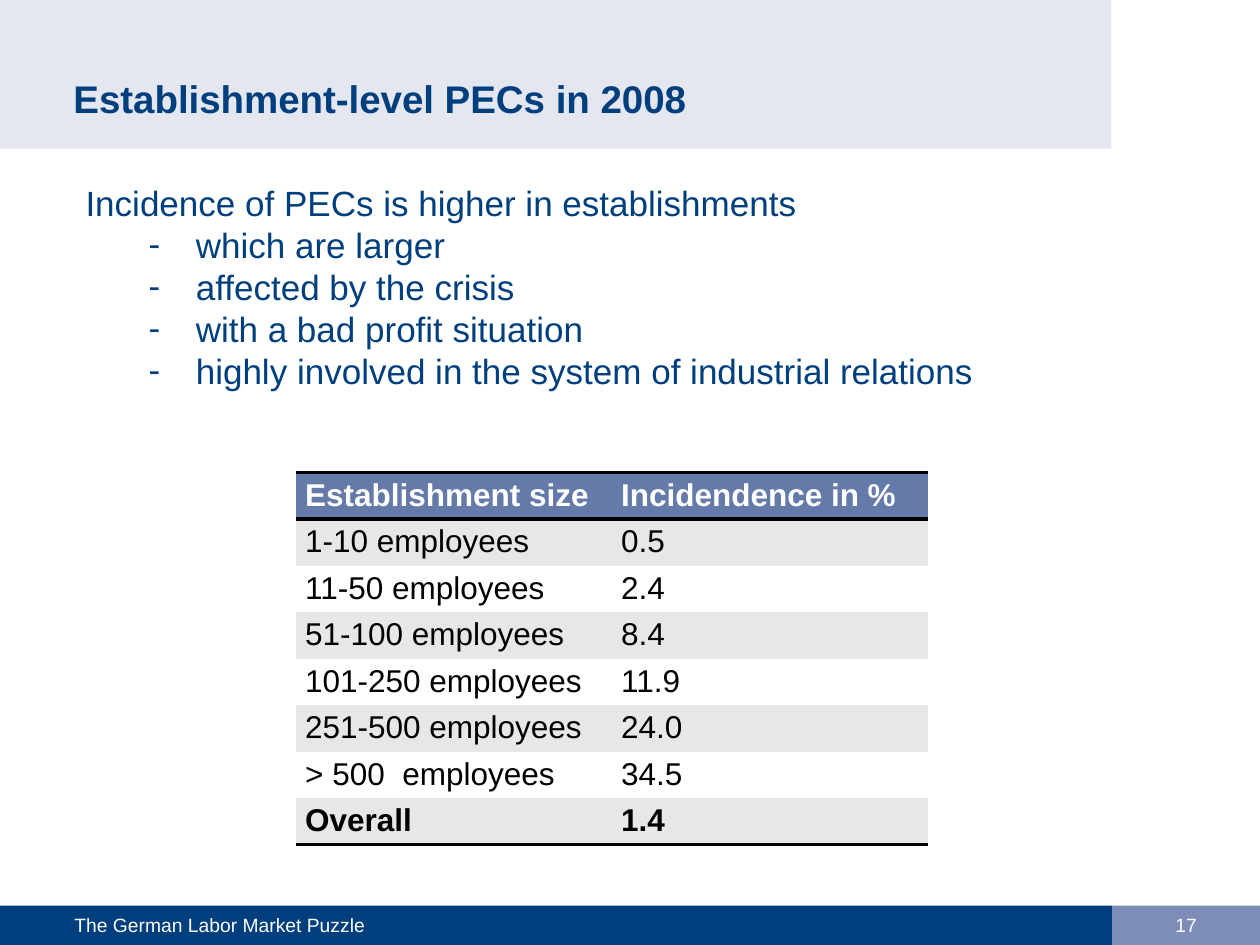
from lxml import etree
from pptx import Presentation
from pptx.dml.color import RGBColor
from pptx.enum.shapes import MSO_SHAPE
from pptx.enum.text import MSO_ANCHOR, PP_ALIGN
from pptx.oxml.ns import qn
from pptx.util import Pt

RECTANGLE = MSO_SHAPE.RECTANGLE
MIDDLE, BOTTOM = MSO_ANCHOR.MIDDLE, MSO_ANCHOR.BOTTOM
LEFT, CENTER = PP_ALIGN.LEFT, PP_ALIGN.CENTER

NAVY = RGBColor(0x00, 0x3F, 0x7D)
PERIWINKLE = RGBColor(0x7D, 0x8D, 0xB7)
PALE_BLUE = RGBColor(0xE4, 0xE6, 0xF0)
HEADER_BLUE = RGBColor(0x64, 0x7A, 0xA9)
BAND_GREY = RGBColor(0xE7, 0xE7, 0xE7)
WHITE = RGBColor(0xFF, 0xFF, 0xFF)
BLACK = RGBColor(0x00, 0x00, 0x00)

FONT = "Arial"
PLAIN_TABLE_STYLE = "{2D5ABB26-0587-4C30-8999-92F81FD0307C}"
REASONS = [
    "which are larger",
    "affected by the crisis",
    "with a bad profit situation",
    "highly involved in the system of industrial relations",
]
INCIDENCE = [
    ("Establishment size", "Incidendence in %"),
    ("1-10 employees", "0.5"),
    ("11-50 employees", "2.4"),
    ("51-100 employees", "8.4"),
    ("101-250 employees", "11.9"),
    ("251-500 employees", "24.0"),
    ("> 500  employees", "34.5"),
    ("Overall", "1.4"),
]


def style_font(paragraph, size, color, bold=False):
    """Set the font of a whole paragraph."""
    font = paragraph.font
    font.name, font.size, font.bold = FONT, Pt(size), bold
    font.color.rgb = color


def set_margins(frame, left, top, right, bottom):
    """Set the inner margins of a text frame or table cell."""
    frame.margin_left, frame.margin_top = Pt(left), Pt(top)
    frame.margin_right, frame.margin_bottom = Pt(right), Pt(bottom)


def add_band(slide, box, fill, text, size, color, margins, anchor, align=LEFT, bold=False):
    """Place a filled rectangle with one line of text."""
    band = slide.shapes.add_shape(RECTANGLE, *map(Pt, box))
    band.shadow.inherit = False
    band.fill.solid()
    band.fill.fore_color.rgb = fill
    band.line.fill.background()
    frame = band.text_frame
    frame.word_wrap = True
    frame.vertical_anchor = anchor
    set_margins(frame, *margins)
    line = frame.paragraphs[0]
    line.text, line.alignment = text, align
    style_font(line, size, color, bold)


def add_title(slide, box):
    """Place the title band."""
    add_band(slide, box, PALE_BLUE, "Establishment-level PECs in 2008", 22, NAVY,
             (42.5, 8.6, 28, 15.8), BOTTOM, bold=True)


def add_footer(slide, box):
    """Place the talk name and the page number side by side."""
    left, top, width, height = box
    page_width = 84.5
    talk_width = width - page_width
    add_band(slide, (left, top, talk_width, height), NAVY, "The German Labor Market Puzzle",
             11, WHITE, (42.5, 3.6, 28, 3.6), MIDDLE)
    add_band(slide, (left + talk_width, top, page_width, height), PERIWINKLE, "17",
             11, WHITE, (7.2, 3.6, 7.2, 3.6), MIDDLE, CENTER)


def add_reasons(slide, box):
    """Place the statement and its dashed list."""
    frame = slide.shapes.add_textbox(*map(Pt, box)).text_frame
    frame.word_wrap = True
    for index, text in enumerate(["Incidence of PECs is higher in establishments", *REASONS]):
        line = frame.paragraphs[0] if index == 0 else frame.add_paragraph()
        line.text = text
        line.line_spacing = Pt(24)
        if index:
            line.level = 1
            properties = line._p.get_or_add_pPr()
            properties.set("marL", str(Pt(63)))
            properties.set("indent", str(Pt(-27)))
            etree.SubElement(properties, qn("a:buFont"), typeface=FONT)
            etree.SubElement(properties, qn("a:buChar"), char="-")
        style_font(line, 20, NAVY)


def add_rule(cell, side):
    """Draw a black border on one side of a cell."""
    rule = etree.SubElement(cell._tc.get_or_add_tcPr(), qn(f"a:{side}"), w=str(Pt(2)))
    fill = etree.SubElement(rule, qn("a:solidFill"))
    etree.SubElement(fill, qn("a:srgbClr"), val=str(BLACK))


def add_incidence_table(slide, box):
    """Place the banded table of incidence by establishment size."""
    last = len(INCIDENCE) - 1
    table = slide.shapes.add_table(len(INCIDENCE), 2, *map(Pt, box)).table
    table._tbl.tblPr.find(qn("a:tableStyleId")).text = PLAIN_TABLE_STYLE
    for row, values in enumerate(INCIDENCE):
        for column, value in enumerate(values):
            cell = table.cell(row, column)
            set_margins(cell, 5.2, 2.9, 5.2, 2.9)
            if row == 0:
                add_rule(cell, "lnT")
            if row in (0, last):
                add_rule(cell, "lnB")
            cell.fill.solid()
            cell.fill.fore_color.rgb = HEADER_BLUE if row == 0 else BAND_GREY if row % 2 else WHITE
            line = cell.text_frame.paragraphs[0]
            line.text = value
            style_font(line, 18, BLACK if row else WHITE, row in (0, last))


def main():
    """Build the slide and save it."""
    deck = Presentation()
    deck.slide_width, deck.slide_height = Pt(720), Pt(540)
    slide = deck.slides.add_slide(deck.slide_layouts[6])
    add_title(slide, (-0.5, 0, 635.5, 85))
    add_footer(slide, (0, 517.5, 720, 22.5))
    add_incidence_table(slide, (169.2, 270, 361.2, 212.8))
    add_reasons(slide, (41.8, 100, 592.6, 177))
    deck.save("out.pptx")


if __name__ == "__main__":
    main()
